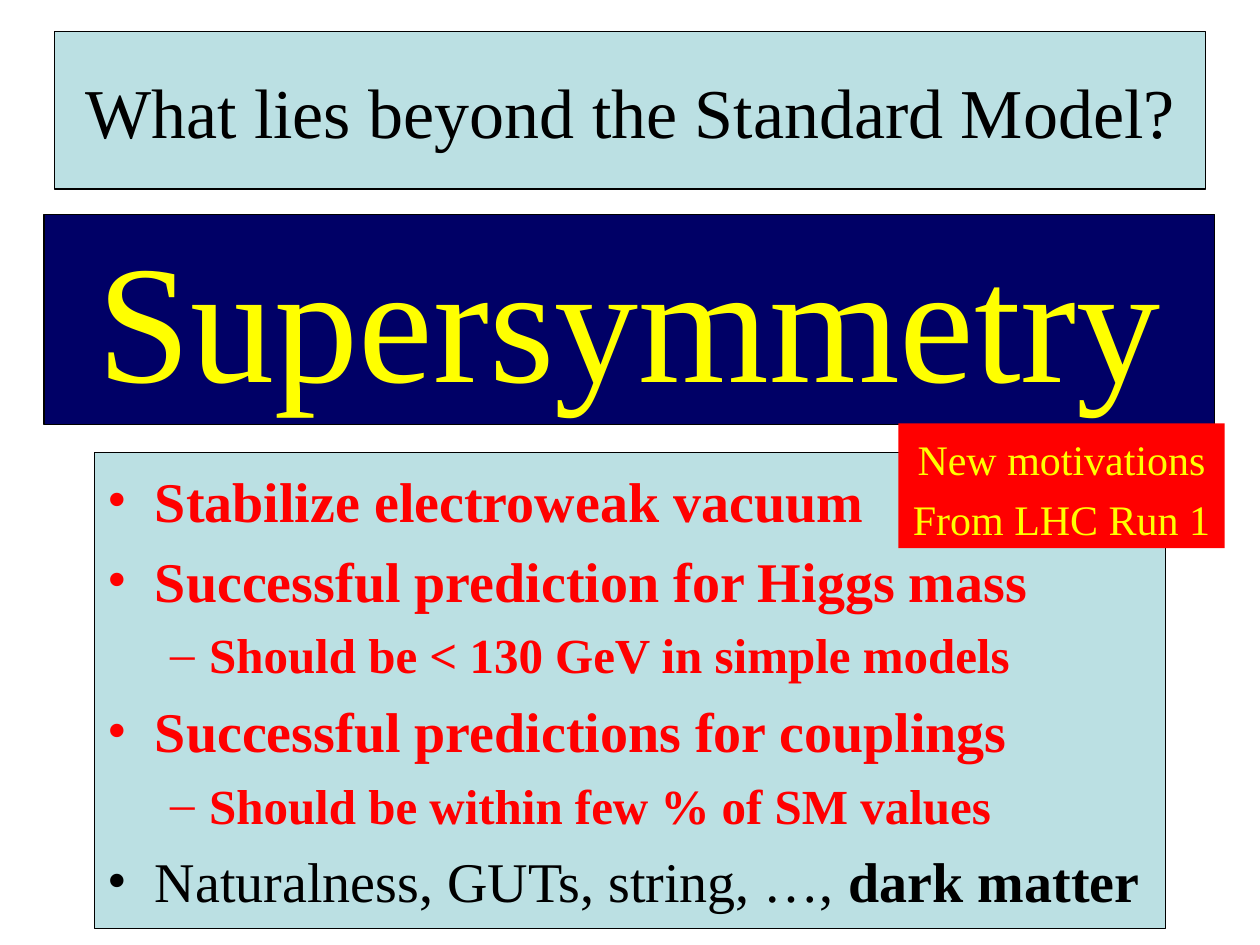
"""Build the slide on supersymmetry beyond the Standard Model."""
from lxml import etree
from pptx import Presentation
from pptx import util as u
from pptx.dml.color import RGBColor
from pptx.enum import shapes, text
from pptx.oxml.ns import qn

HEX = {"pale": "BBE0E3", "navy": "000066", "red": "FF0000",
       "gold": "FFFF00", "ink": "000000"}
FACE = "Times New Roman"
TITLE = [(0, "ink", [("What lies beyond the Standard Model?", False)])]
THEME = [(0, "gold", [("Supersymmetry", False)])]
CASES = [
    (0, "red", [("Stabilize electroweak vacuum", True)]),
    (0, "red", [("Successful prediction for Higgs mass", True)]),
    (1, "red", [("Should be < 130 GeV in simple models", True)]),
    (0, "red", [("Successful predictions for couplings", True)]),
    (1, "red", [("Should be within few % of SM values", True)]),
    (0, "ink", [("Naturalness, GUTs, string, …, ", False), ("dark matter", True)]),
]
BADGE = [(0, "gold", [("New motivations", False)]),
         (0, "gold", [("From LHC Run 1", False)])]
MARKS = [("•", 0.38, -0.38), ("–", 0.81, -0.31)]
GAP = 0.23


def color(name):
    return RGBColor.from_string(HEX[name])


def mark(para, level, listed):
    prop = para._p.get_or_add_pPr()
    if not listed:
        prop.set("marL", "0")
        prop.set("indent", "0")
        etree.SubElement(prop, qn("a:buNone"))
        return
    sign, left, hang = MARKS[level]
    prop.set("marL", str(u.Inches(left)))
    prop.set("indent", str(u.Inches(hang)))
    etree.SubElement(prop, qn("a:buFont")).set("typeface", FACE)
    etree.SubElement(prop, qn("a:buChar")).set("char", sign)


def fill(shape, place, back, rows, sizes, top=0.05, edge=True,
         listed=False, lead=1.0, anchor=text.MSO_ANCHOR.TOP, wrap=True):
    shape.left, shape.top, shape.width, shape.height = map(u.Inches, place)
    shape.fill.solid()
    shape.fill.fore_color.rgb = color(back)
    if edge:
        shape.line.color.rgb = color("ink")
        shape.line.width = u.Pt(0.75)
    else:
        shape.line.fill.background()
    frame = shape.text_frame
    frame.auto_size = text.MSO_AUTO_SIZE.NONE
    frame.word_wrap = wrap
    frame.vertical_anchor = anchor
    frame.margin_top = u.Inches(top)
    for num, (level, tint, runs) in enumerate(rows):
        para = frame.add_paragraph() if num else frame.paragraphs[0]
        para.level = level
        mark(para, level, listed)
        para.alignment = text.PP_ALIGN.LEFT if listed else text.PP_ALIGN.CENTER
        para.line_spacing = lead
        para.space_before = u.Pt(round(GAP * sizes[level], 1) if num else 0)
        font = para.font
        font.name, font.size = FACE, u.Pt(sizes[level])
        font.color.rgb = color(tint)
        same = len({bold for _, bold in runs}) == 1
        if same:
            font.bold = runs[0][1]
        for words, bold in runs:
            run = para.add_run()
            run.text = words
            if not same:
                run.font.bold = bold


def main():
    deck = Presentation()
    deck.slide_width, deck.slide_height = u.Inches(10), u.Inches(7.5)
    slide = deck.slides.add_slide(deck.slide_layouts[3])
    for spare in list(slide.placeholders)[3:]:
        spare._element.getparent().remove(spare._element)
    title, theme, cases = slide.placeholders
    fill(title, (0.43, 0.25, 9.14, 1.25), "pale", TITLE, [40],
         anchor=text.MSO_ANCHOR.MIDDLE)
    fill(theme, (0.35, 1.7, 9.29, 1.67), "navy", THEME, [96], top=0.18, lead=0.9)
    fill(cases, (0.75, 3.59, 8.5, 3.78), "pale", CASES, [32, 28],
         top=0.11, listed=True)
    badge = slide.shapes.add_shape(shapes.MSO_SHAPE.RECTANGLE, 0, 0, 0, 0)
    badge.shadow.inherit = False
    fill(badge, (7.13, 3.36, 2.59, 0.99), "red", BADGE, [24],
         top=0.08, edge=False, wrap=False)
    deck.save("out.pptx")


if __name__ == "__main__":
    main()
